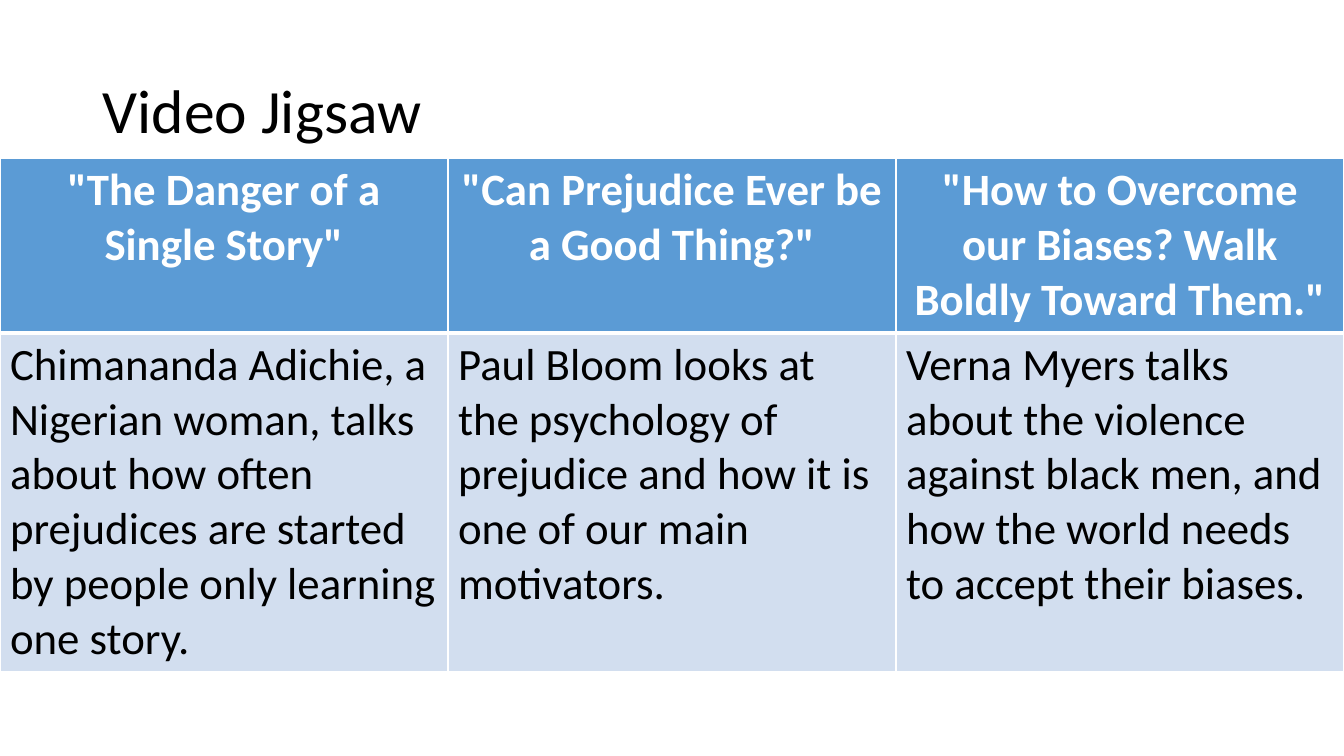
from lxml.etree import SubElement
from pptx import Presentation
from pptx.dml.color import RGBColor
from pptx.enum.text import MSO_ANCHOR as Anchor, MSO_AUTO_SIZE as AutoSize, PP_ALIGN as Align
from pptx.oxml.ns import qn
from pptx.util import Inches, Pt

VIDEOS = [
    ('"The Danger of a Single Story"',
     "Chimananda Adichie, a Nigerian woman, talks about how often prejudices "
     "are started by people only learning one story."),
    ('"Can Prejudice Ever be a Good Thing?"',
     "Paul Bloom looks at the psychology of prejudice and how it is one of "
     "our main motivators."),
    ('"How to Overcome our Biases? Walk Boldly Toward Them."',
     "Verna Myers talks about the violence against black men, and how the "
     "world needs to accept their biases."),
]
SLIDE_WIDTH = 13.33
ROW_HEIGHTS = (1.73, 3.35)


def color(value):
    return RGBColor.from_string(value)


def write(frame, text, size, ink, align, bold=False):
    paragraph = frame.paragraphs[0]
    paragraph.alignment = align
    run = paragraph.add_run()
    run.text = text
    run.font.name = "Calibri"
    run.font.size = Pt(size)
    run.font.bold = bold
    run.font.color.rgb = color(ink)
    return paragraph


def add_title(slide, text):
    title = slide.shapes.title
    title.left, title.top = Inches(0.92), Inches(0.4)
    title.width, title.height = Inches(11.5), Inches(1.45)
    frame = title.text_frame
    frame.auto_size = AutoSize.NONE
    frame.vertical_anchor = Anchor.MIDDLE
    write(frame, text, 44, "000000", Align.LEFT).line_spacing = 0.9


def set_borders(cell, widths):
    properties = cell._tc.get_or_add_tcPr()
    for position, (side, width) in enumerate(widths.items()):
        border = properties.makeelement(qn(f"a:{side}"), {"w": str(Pt(width))})
        fill = SubElement(border, qn("a:solidFill"))
        SubElement(fill, qn("a:srgbClr"), val="FFFFFF")
        properties.insert(position, border)


def fill_cell(cell, text, background, ink, align, bold, top, bottom):
    cell.fill.solid()
    cell.fill.fore_color.rgb = color(background)
    write(cell.text_frame, text, 32, ink, align, bold)
    set_borders(cell, {"lnL": 1, "lnR": 1, "lnT": top, "lnB": bottom})


def add_video_table(slide):
    table = slide.shapes.add_table(
        len(ROW_HEIGHTS), len(VIDEOS), Inches(0), Inches(1.57),
        Inches(SLIDE_WIDTH), Inches(sum(ROW_HEIGHTS))).table
    for row, height in zip(table.rows, ROW_HEIGHTS):
        row.height = Inches(height)
    for column, (name, summary) in enumerate(VIDEOS):
        table.columns[column].width = Inches(SLIDE_WIDTH / len(VIDEOS))
        fill_cell(table.cell(0, column), name, "5B9BD5", "FFFFFF", Align.CENTER, True, 1, 3)
        fill_cell(table.cell(1, column), summary, "D2DEEF", "000000", Align.LEFT, False, 3, 1)


def main():
    deck = Presentation()
    deck.slide_width, deck.slide_height = Inches(SLIDE_WIDTH), Inches(7.5)
    slide = deck.slides.add_slide(deck.slide_layouts.get_by_name("Title Only"))
    add_title(slide, "Video Jigsaw")
    add_video_table(slide)
    deck.save("out.pptx")


if __name__ == "__main__":
    main()
